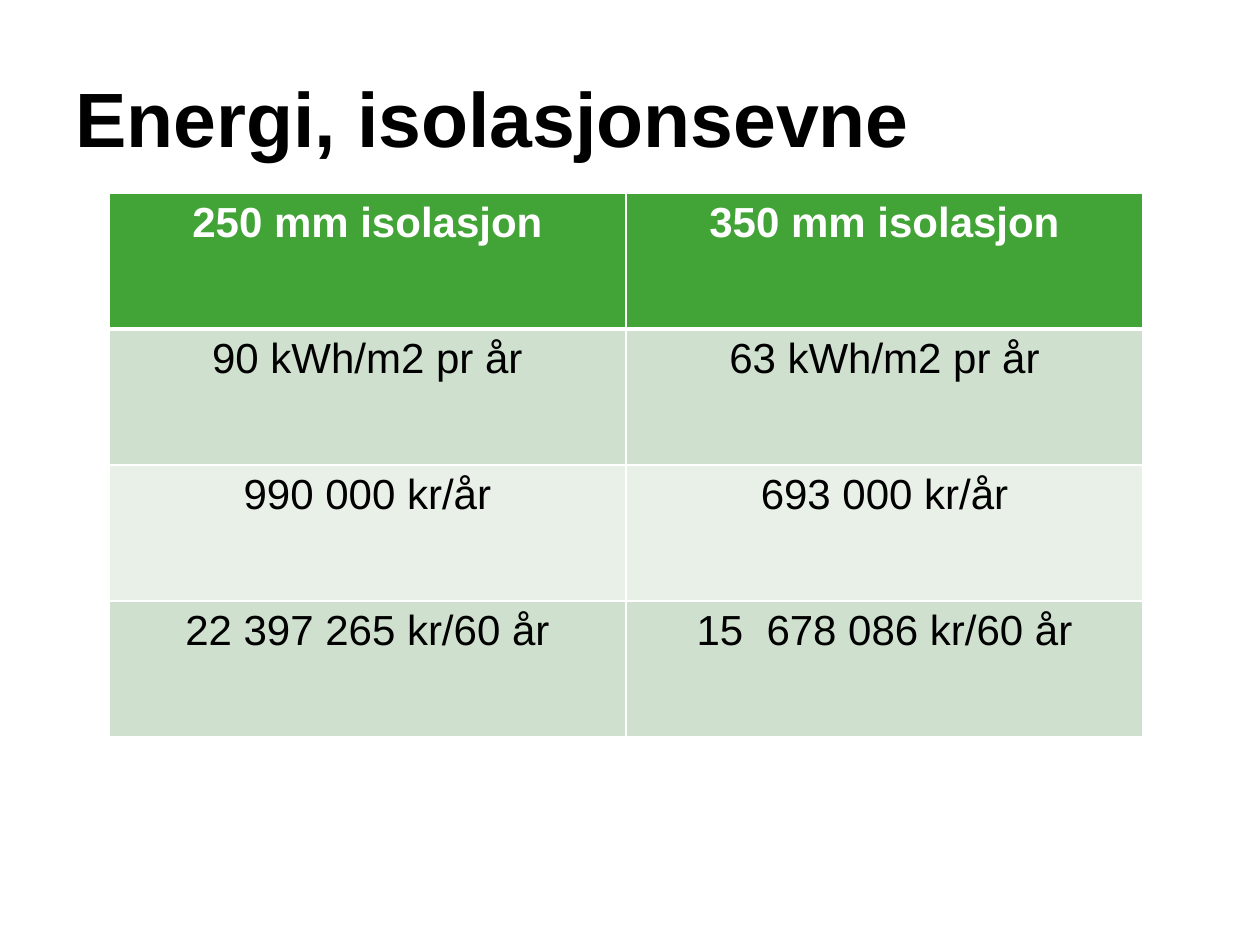
from dataclasses import dataclass

from lxml.etree import SubElement
from pptx import Presentation
from pptx.dml.color import RGBColor as RGB
from pptx.enum.text import MSO_ANCHOR as Anchor, PP_ALIGN as Align
from pptx.oxml.ns import qn
from pptx.util import Pt

COLORS = {
    "black": "000000",
    "white": "FFFFFF",
    "header": "42A437",
    "dark_band": "CFE0CE",
    "light_band": "E9F0E8",
}


@dataclass
class RowStyle:
    """Look of one table row; border widths in points."""
    fill: str
    color: str = "black"
    bold: bool = False
    top: float = 1
    bottom: float = 1


ROWS = [
    (("250 mm isolasjon", "350 mm isolasjon"),
     RowStyle("header", "white", True, bottom=3)),
    (("90 kWh/m2 pr år", "63 kWh/m2 pr år"), RowStyle("dark_band", top=3)),
    (("990 000 kr/år", "693 000 kr/år"), RowStyle("light_band")),
    (("22 397 265 kr/60 år", "15  678 086 kr/60 år"), RowStyle("dark_band")),
]


def write(tf, text: str, size: float, color: str, bold: bool, align) -> None:
    """Put one formatted run in a text frame."""
    p = tf.paragraphs[0]
    p.alignment = align
    r = p.add_run()
    r.text = text
    for name, value in {"name": "Arial", "size": Pt(size), "bold": bold}.items():
        setattr(r.font, name, value)
    r.font.color.rgb = RGB.from_string(COLORS[color])


def add_borders(cell, style: RowStyle) -> None:
    """Draw white lines on the four sides of a cell."""
    tc_pr = cell._tc.get_or_add_tcPr()
    sides = {"lnL": 1, "lnR": 1, "lnT": style.top, "lnB": style.bottom}
    for side, width in sides.items():
        ln = SubElement(tc_pr, qn(f"a:{side}"), w=str(Pt(width)))
        fill = SubElement(ln, qn("a:solidFill"))
        SubElement(fill, qn("a:srgbClr"), val=COLORS["white"])


def add_title(s, text: str) -> None:
    """Add the slide title."""
    tf = s.shapes.add_textbox(Pt(36), Pt(21.6), Pt(648), Pt(90)).text_frame
    for name, value in {"word_wrap": True, "vertical_anchor": Anchor.MIDDLE}.items():
        setattr(tf, name, value)
    write(tf, text, 44, "black", True, Align.LEFT)


def add_energy_table(s) -> None:
    """Add the comparison of insulation thicknesses."""
    frame = s.shapes.add_table(len(ROWS), 2, Pt(62.2), Pt(110.3), Pt(591), Pt(311))
    table = frame.table
    for row, (texts, style) in zip(table.rows, ROWS):
        for cell, text in zip(row.cells, texts):
            add_borders(cell, style)
            cell.fill.solid()
            cell.fill.fore_color.rgb = RGB.from_string(COLORS[style.fill])
            write(cell.text_frame, text, 24, style.color, style.bold, Align.CENTER)


def main() -> None:
    """Build and save the slide."""
    prs = Presentation()
    prs.slide_width, prs.slide_height = Pt(720), Pt(540)
    s = prs.slides.add_slide(prs.slide_layouts[6])
    add_title(s, "Energi, isolasjonsevne")
    add_energy_table(s)
    prs.save("out.pptx")


if __name__ == "__main__":
    main()
